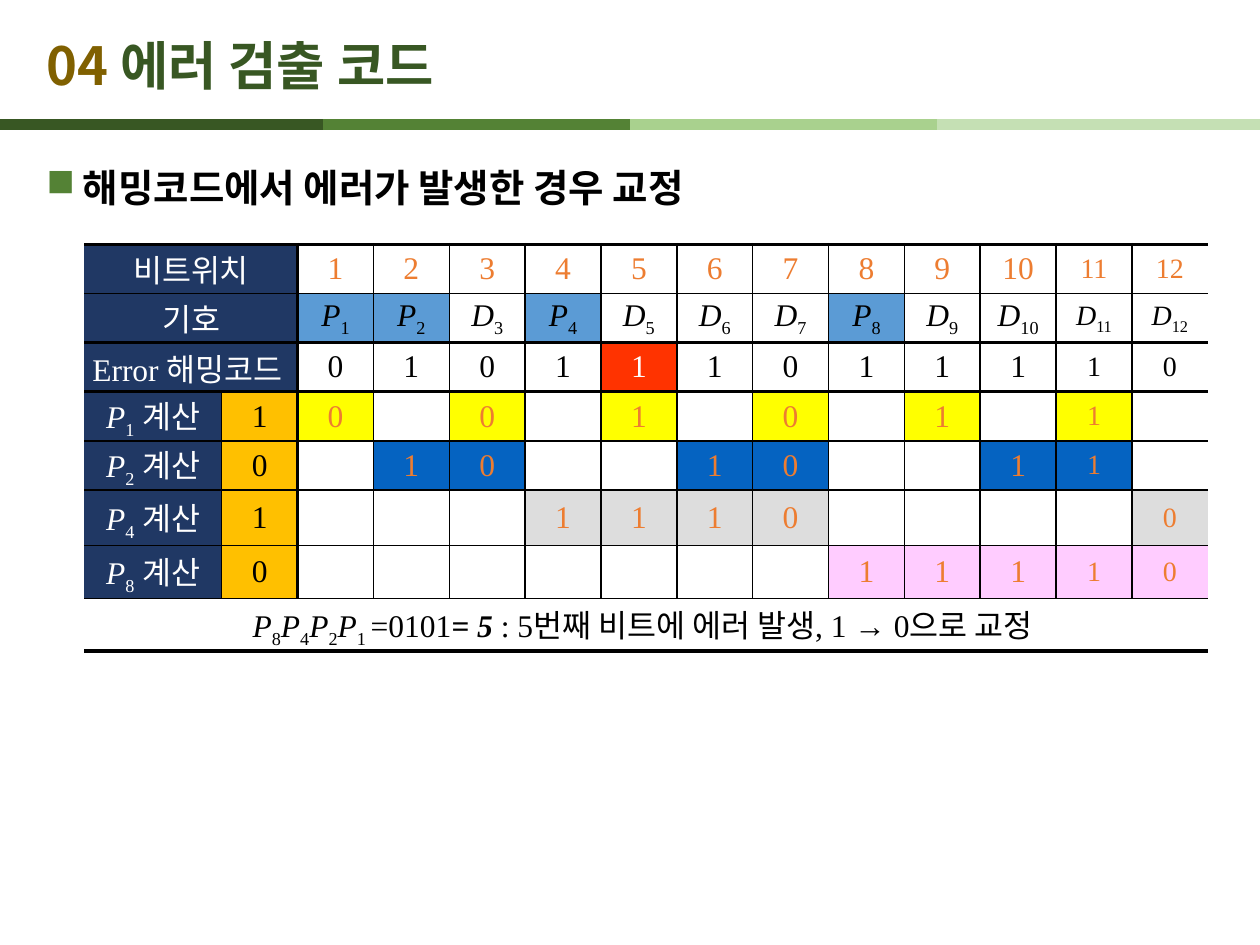
"""Build the slide on correcting an error found with a Hamming code."""
from dataclasses import dataclass
from typing import Optional

from lxml import etree
from pptx import Presentation
from pptx.dml.color import RGBColor
from pptx.enum.shapes import MSO_CONNECTOR
from pptx.enum.text import MSO_ANCHOR, PP_ALIGN
from pptx.oxml.ns import qn
from pptx.util import Inches, Pt

STRAIGHT = MSO_CONNECTOR.STRAIGHT
MIDDLE, TOP = MSO_ANCHOR.MIDDLE, MSO_ANCHOR.TOP
CENTER, LEFT = PP_ALIGN.CENTER, PP_ALIGN.LEFT
WIDTH, HEIGHT = Inches(10), Inches(7.5)
SANS, SERIF = "Noto Sans CJK KR", "Times New Roman"
COLORS = {
    "black": "000000", "white": "FFFFFF", "navy": "203864", "gold": "FFC000",
    "orange": "ED7D31", "blue": "5B9BD5", "red": "FF3300", "brown": "806000",
    "forest": "385723", "green": "548235", "lime": "A9D18E", "mint": "C5E0B4",
    "yellow": "FFFF00", "royal": "0563C1", "gray": "DDDDDD", "pink": "FFCCFF",
}
CODE = [0, 1, 0, 1, 1, 1, 0, 1, 1, 1, 1, 0]
CHECKS = {1: "yellow", 2: "royal", 4: "gray", 8: "pink"}
ERROR_POSITION = 5
LABEL_COLUMNS = 2
COLUMN_COUNT = LABEL_COLUMNS + len(CODE)
TABLE_WIDTH, LABEL_WIDTH = 8.92, 1.09
ROW_HEIGHTS = [0.39] * 5 + [0.44, 0.42, 0.42]
ROW_RULES = [2.25, 1, 2.25, 2.25, 1, 1, 1, 1, 2.25]
CELL_FORMAT = {"margin_left": 0, "margin_right": 0, "margin_top": 0,
               "margin_bottom": 0, "vertical_anchor": MIDDLE}


@dataclass(frozen=True)
class Span:
    text: str
    color: str = "black"
    size: float = 18
    face: str = SERIF
    bold: bool = False
    italic: bool = False
    subscript: bool = False


@dataclass(frozen=True)
class Cell:
    row: int
    column: int
    spans: tuple[Span, ...] = ()
    fill: Optional[str] = None
    width: int = 1


@dataclass(frozen=True)
class Stripe:
    start: float
    color: str


STRIPES = [Stripe(0, "forest"), Stripe(0.256, "green"),
           Stripe(0.5, "lime"), Stripe(0.744, "mint")]


def symbol(letter: str, index: int, color: str = "black", size: float = 18) -> tuple[Span, ...]:
    return (Span(letter, color, size, italic=True),
            Span(str(index), color, size, subscript=True))


def write(paragraph, spans: tuple[Span, ...], alignment) -> None:
    paragraph.alignment = alignment
    for item in spans:
        span = paragraph.add_run()
        span.text = item.text
        formats = {"name": item.face, "size": Pt(item.size),
                   "bold": item.bold, "italic": item.italic}
        for name, value in formats.items():
            setattr(span.font, name, value)
        span.font.color.rgb = RGBColor.from_string(COLORS[item.color])
        properties = span._r.get_or_add_rPr()
        etree.SubElement(properties, qn("a:ea"), typeface=SANS)
        if item.subscript:
            properties.set("baseline", "-25000")


def draw_stripe(page, stripe: Stripe) -> None:
    start, level = int(WIDTH * stripe.start), int(HEIGHT * 0.132)
    line = page.shapes.add_connector(STRAIGHT, start, level, start + int(WIDTH * 0.256), level)
    line.line.width = Pt(6)
    line.line.color.rgb = RGBColor.from_string(COLORS[stripe.color])
    etree.SubElement(line._element.spPr, qn("a:effectLst"))


def draw_text(page, place: tuple[float, ...], spans: tuple[Span, ...], anchor):
    box = page.shapes.add_textbox(*map(Inches, place))
    frame = box.text_frame
    frame.word_wrap = True
    frame.vertical_anchor = anchor
    write(frame.paragraphs[0], spans, LEFT)
    return frame.paragraphs[0]


def add_bullet(paragraph) -> None:
    paragraph.line_spacing = 1.5
    properties = paragraph._p.get_or_add_pPr()
    properties.set("marL", str(Inches(0.29)))
    properties.set("indent", str(-Inches(0.29)))
    color = etree.SubElement(properties, qn("a:buClr"))
    etree.SubElement(color, qn("a:srgbClr"), val=COLORS["green"])
    etree.SubElement(properties, qn("a:buChar"), char="■")


def column_rule(edge: int) -> float:
    if edge in (0, COLUMN_COUNT):
        return 0
    return 2.25 if edge == LABEL_COLUMNS else 1


def add_border(cell, side: str, points: float) -> None:
    line = etree.SubElement(cell._tc.get_or_add_tcPr(), qn(f"a:ln{side}"), w=str(Pt(points)))
    if points:
        fill = etree.SubElement(line, qn("a:solidFill"))
        etree.SubElement(fill, qn("a:srgbClr"), val=COLORS["black"])
    else:
        etree.SubElement(line, qn("a:noFill"))


def draw_cell(table, item: Cell) -> None:
    end = item.column + item.width
    borders = {"L": column_rule(item.column), "R": column_rule(end),
               "T": ROW_RULES[item.row], "B": ROW_RULES[item.row + 1]}
    for column in range(item.column, end):
        cell = table.cell(item.row, column)
        for side, points in borders.items():
            add_border(cell, side, points)
        if item.fill:
            cell.fill.solid()
            cell.fill.fore_color.rgb = RGBColor.from_string(COLORS[item.fill])
        else:
            cell.fill.background()
        for name, value in CELL_FORMAT.items():
            setattr(cell, name, value)
    first = table.cell(item.row, item.column)
    if item.width > 1:
        first.merge(table.cell(item.row, end - 1))
    write(first.text_frame.paragraphs[0], item.spans, CENTER)


def table_cells() -> list[Cell]:
    headings = ["비트위치", "기호", "Error 해밍코드 "]
    cells = [Cell(row, 0, (Span(text, "white"),), "navy", LABEL_COLUMNS)
             for row, text in enumerate(headings)]
    for position, bit in enumerate(CODE, 1):
        column = position + LABEL_COLUMNS - 1
        size = 16 if position > 10 else 18
        parity, error = position in CHECKS, position == ERROR_POSITION
        cells += [
            Cell(0, column, (Span(str(position), "orange", size),)),
            Cell(1, column, symbol("P" if parity else "D", position, size=size),
                 "blue" if parity else None),
            Cell(2, column, (Span(str(bit), "white" if error else "black", size),),
                 "red" if error else "white"),
        ]
        for row, (check, fill) in enumerate(CHECKS.items(), len(headings)):
            covered = position & check
            cells.append(Cell(row, column, (Span(str(bit), "orange", size),) if covered else (),
                              fill if covered else None))
    for row, check in enumerate(CHECKS, len(headings)):
        total = sum(bit for position, bit in enumerate(CODE, 1) if position & check) % 2
        cells += [Cell(row, 0, (*symbol("P", check, "white"), Span(" 계산", "white")), "navy"),
                  Cell(row, 1, (Span(str(total)),), "gold")]
    checks = tuple(span for check in reversed(CHECKS) for span in symbol("P", check))
    result = (*checks, Span(" ", subscript=True), Span("=0101"),
              Span("= 5", bold=True, italic=True),
              Span(" : 5번째 비트에 에러 발생, 1 → 0으로 교정 "))
    return cells + [Cell(len(ROW_HEIGHTS) - 1, 0, result, width=COLUMN_COUNT)]


def draw_table(page) -> None:
    frame = page.shapes.add_table(len(ROW_HEIGHTS), COLUMN_COUNT, Inches(0.67), Inches(1.94),
                                  Inches(TABLE_WIDTH), Inches(sum(ROW_HEIGHTS)))
    table = frame.table
    table.first_row = table.horz_banding = False
    bit_width = (TABLE_WIDTH - LABEL_WIDTH) / (COLUMN_COUNT - 1)
    for index, column in enumerate(table.columns):
        column.width = Inches(bit_width if index else LABEL_WIDTH)
    for row, height in zip(table.rows, ROW_HEIGHTS):
        row.height = Inches(height)
    for item in table_cells():
        draw_cell(table, item)


def main() -> None:
    deck = Presentation()
    deck.slide_width, deck.slide_height = WIDTH, HEIGHT
    page = deck.slides.add_slide(deck.slide_layouts[6])
    for stripe in STRIPES:
        draw_stripe(page, stripe)
    title = (Span("04 ", "brown", 30, SANS, True), Span("에러 검출 코드", "forest", 30, SANS, True))
    draw_text(page, (0.27, 0.21, 8.27, 0.6), title, MIDDLE)
    topic = (Span("해밍코드에서 에러가 발생한 경우 교정", "black", 22, SANS, True),)
    add_bullet(draw_text(page, (0.27, 1.07, 9.45, 5.98), topic, TOP))
    draw_table(page)
    deck.save("out.pptx")


if __name__ == "__main__":
    main()
